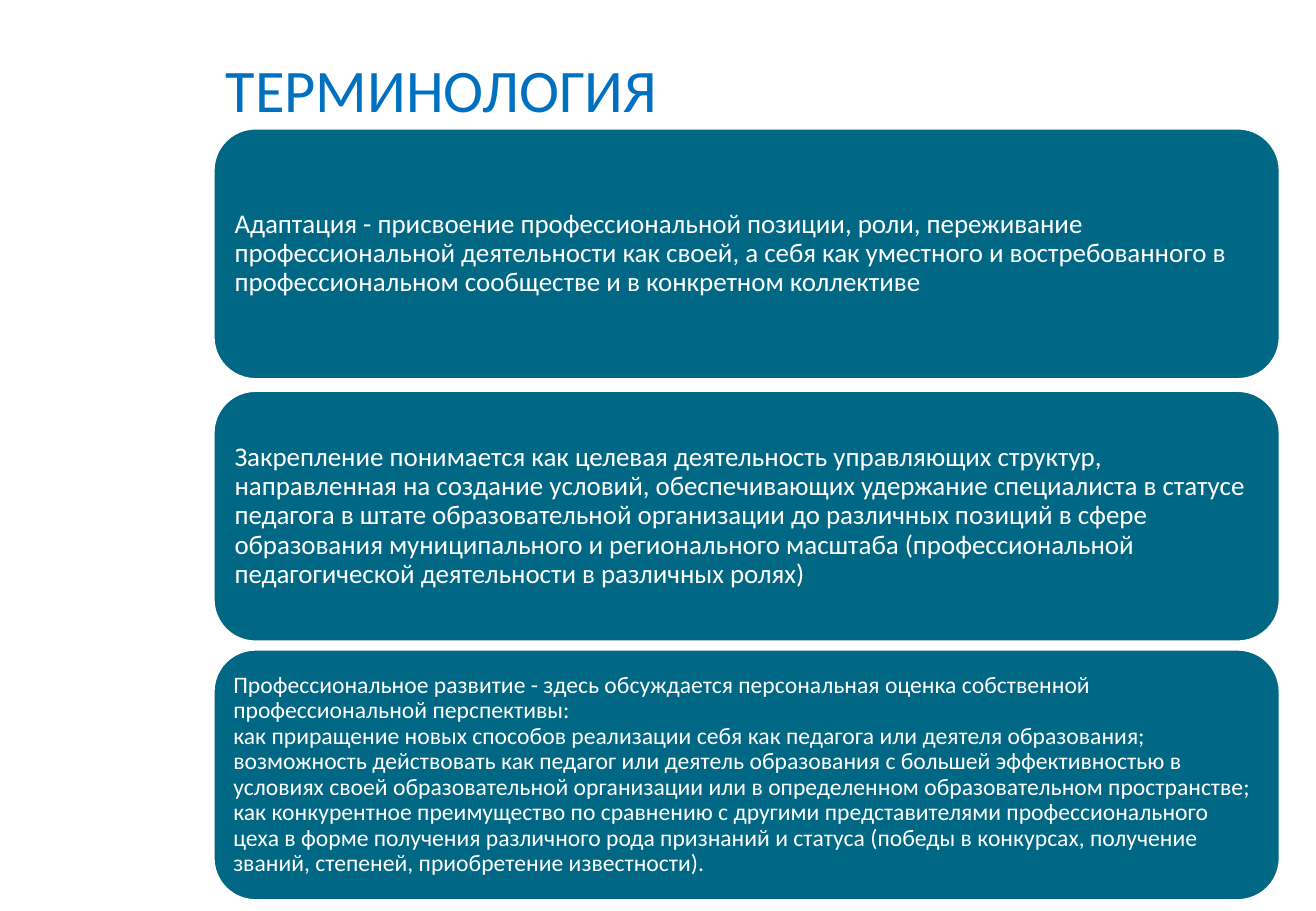
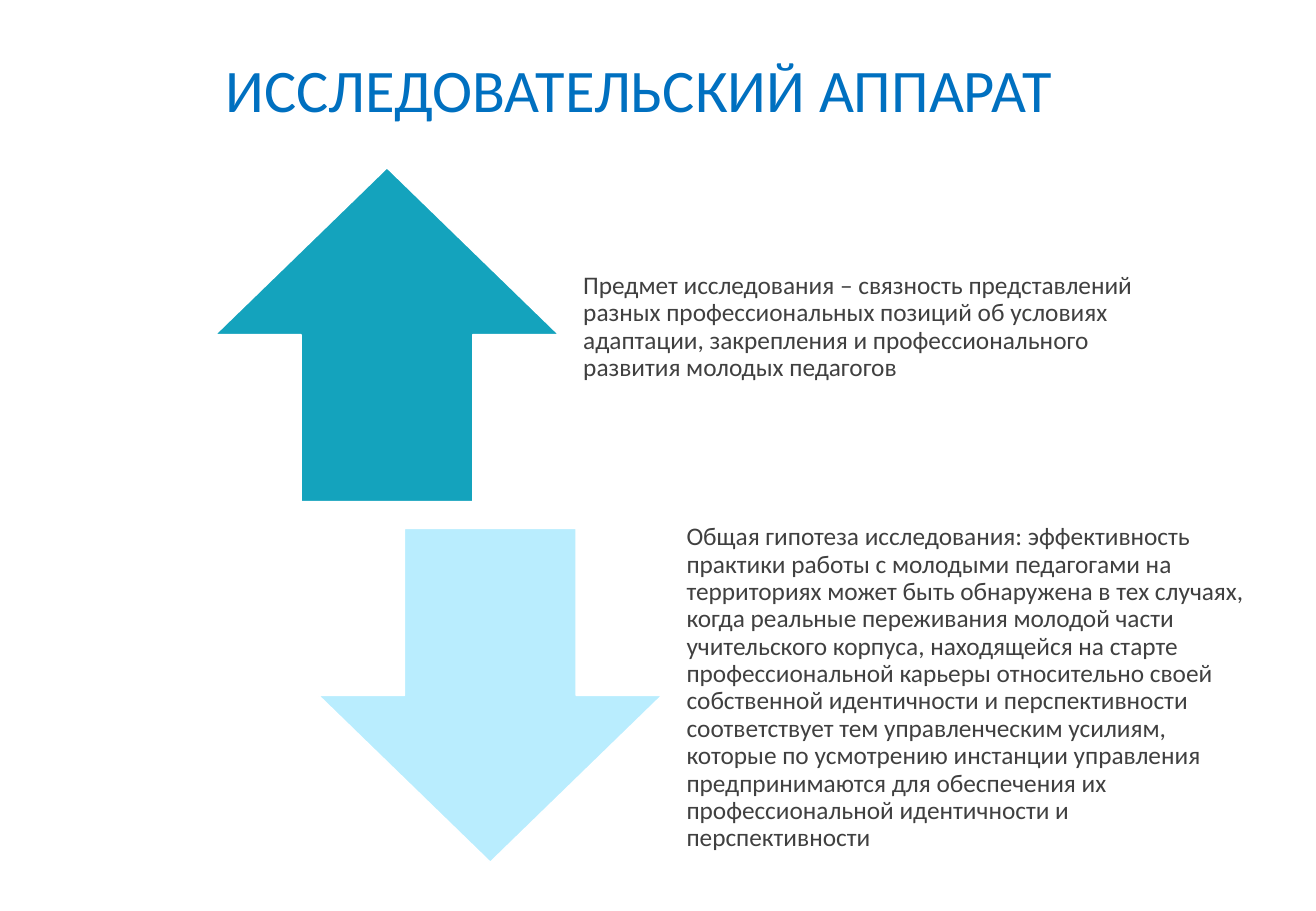
from dataclasses import dataclass

from pptx import Presentation
from pptx import util as u
from pptx.dml.color import RGBColor
from pptx.enum import shapes, text

PX = u.Inches(1) // 100  # 100 px to the inch


@dataclass(frozen=True)
class Theme:
    font: str = "Calibri"
    title: str = "0070C0"
    panel: str = "006885"
    up: str = "14A3BD"
    down: str = "B9EDFE"
    body: str = "404040"
    white: str = "FFFFFF"
    title_size: float = 35.8
    panel_size: int = 16
    dense_size: int = 14
    body_size: int = 15


THEME = Theme()
SLIDE_SIZE = (1083, 750)
TITLE_BOX = (176, 41, 833, 67)
PANELS_BOX = (176, 106, 877, 635)
PANEL_HEIGHT = 206
ROW_SIZE = (774, 275)
ARROW_WIDTH = 283
ARROW_GAP = 8

TERMS = [
    ("Адаптация - присвоение профессиональной позиции, роли, переживание "
     "профессиональной деятельности как своей, а себя как уместного и "
     "востребованного в профессиональном сообществе и в конкретном коллективе",
     0, THEME.panel_size, 7),
    ("Закрепление понимается как целевая деятельность управляющих структур, "
     "направленная на создание условий, обеспечивающих удержание специалиста в "
     "статусе педагога в штате образовательной организации до различных позиций "
     "в сфере образования муниципального и регионального масштаба "
     "(профессиональной педагогической деятельности в различных ролях)",
     216, THEME.panel_size, 7),
    ("Профессиональное развитие - здесь обсуждается персональная оценка "
     "собственной профессиональной перспективы:\v"
     "как приращение новых способов реализации себя как педагога или деятеля "
     "образования; возможность действовать как педагог или деятель образования "
     "с большей эффективностью в условиях своей образовательной организации или "
     "в определенном образовательном пространстве;\v"
     "как конкурентное преимущество по сравнению с другими представителями "
     "профессионального цеха в форме получения различного рода признаний и "
     "статуса (победы в конкурсах, получение званий, степеней, приобретение "
     "известности).",
     429, THEME.dense_size, 6),
]

STATEMENTS = [
    ("Предмет исследования – связность представлений разных профессиональных "
     "позиций об условиях адаптации, закрепления и профессионального развития "
     "молодых педагогов",
     shapes.MSO_SHAPE.UP_ARROW, THEME.up, (177, 138)),
    ("Общая гипотеза исследования: эффективность практики работы с молодыми "
     "педагогами на территориях может быть обнаружена в тех случаях, когда "
     "реальные переживания молодой части учительского корпуса, находящейся на "
     "старте профессиональной карьеры относительно своей собственной "
     "идентичности и перспективности соответствует тем управленческим усилиям, "
     "которые по усмотрению инстанции управления предпринимаются для "
     "обеспечения их профессиональной идентичности и перспективности",
     shapes.MSO_SHAPE.DOWN_ARROW, THEME.down, (262, 435)),
]


def emu(box):
    return [u.Emu(length * PX) for length in box]


def write(shape, words, size, color, margins, anchor=text.MSO_ANCHOR.MIDDLE,
          line_spacing=0.9):
    """Fill a shape with one left-aligned paragraph; margins run left, top, right, bottom."""
    frame = shape.text_frame
    frame.word_wrap = True
    frame.vertical_anchor = anchor
    (frame.margin_left, frame.margin_top,
     frame.margin_right, frame.margin_bottom) = emu(margins)
    paragraph = frame.paragraphs[0]
    paragraph.text = words
    paragraph.alignment = text.PP_ALIGN.LEFT
    paragraph.line_spacing = line_spacing
    paragraph.font.name = THEME.font
    paragraph.font.size = u.Pt(size)
    paragraph.font.color.rgb = RGBColor.from_string(color)


def add_block(slide, kind, box, fill):
    shape = slide.shapes.add_shape(kind, *emu(box))
    shape.shadow.inherit = False
    shape.fill.solid()
    shape.fill.fore_color.rgb = RGBColor.from_string(fill)
    shape.line.color.rgb = RGBColor.from_string(THEME.white)
    shape.line.width = u.Pt(1)
    return shape


def add_titled_slide(presentation, title):
    slide = presentation.slides.add_slide(presentation.slide_layouts[6])
    write(slide.shapes.add_textbox(*emu(TITLE_BOX)), title, THEME.title_size,
          THEME.title, (10, 5, 10, 5), text.MSO_ANCHOR.BOTTOM, 0.85)
    return slide


def add_term_panels(slide, box):
    left, top, width, _ = box
    for words, offset, size, margin in TERMS:
        panel = add_block(slide, shapes.MSO_SHAPE.ROUNDED_RECTANGLE,
                          (left, top + offset, width, PANEL_HEIGHT), THEME.panel)
        write(panel, words, size, THEME.white, [margin] * 4)


def add_arrow_row(slide, box, words, kind, fill):
    left, top, width, height = box
    add_block(slide, kind, (left, top, ARROW_WIDTH, height), fill)
    indent = ARROW_WIDTH + ARROW_GAP
    caption = slide.shapes.add_textbox(
        *emu((left + indent, top, width - indent, height)))
    write(caption, words, THEME.body_size, THEME.body, (12, 0, 12, 12))


def main():
    presentation = Presentation()
    presentation.slide_width, presentation.slide_height = emu(SLIDE_SIZE)

    add_term_panels(add_titled_slide(presentation, "ТЕРМИНОЛОГИЯ"), PANELS_BOX)

    research = add_titled_slide(presentation, "ИССЛЕДОВАТЕЛЬСКИЙ АППАРАТ")
    for words, kind, fill, corner in STATEMENTS:
        add_arrow_row(research, corner + ROW_SIZE, words, kind, fill)

    presentation.save("out.pptx")


if __name__ == "__main__":
    main()
